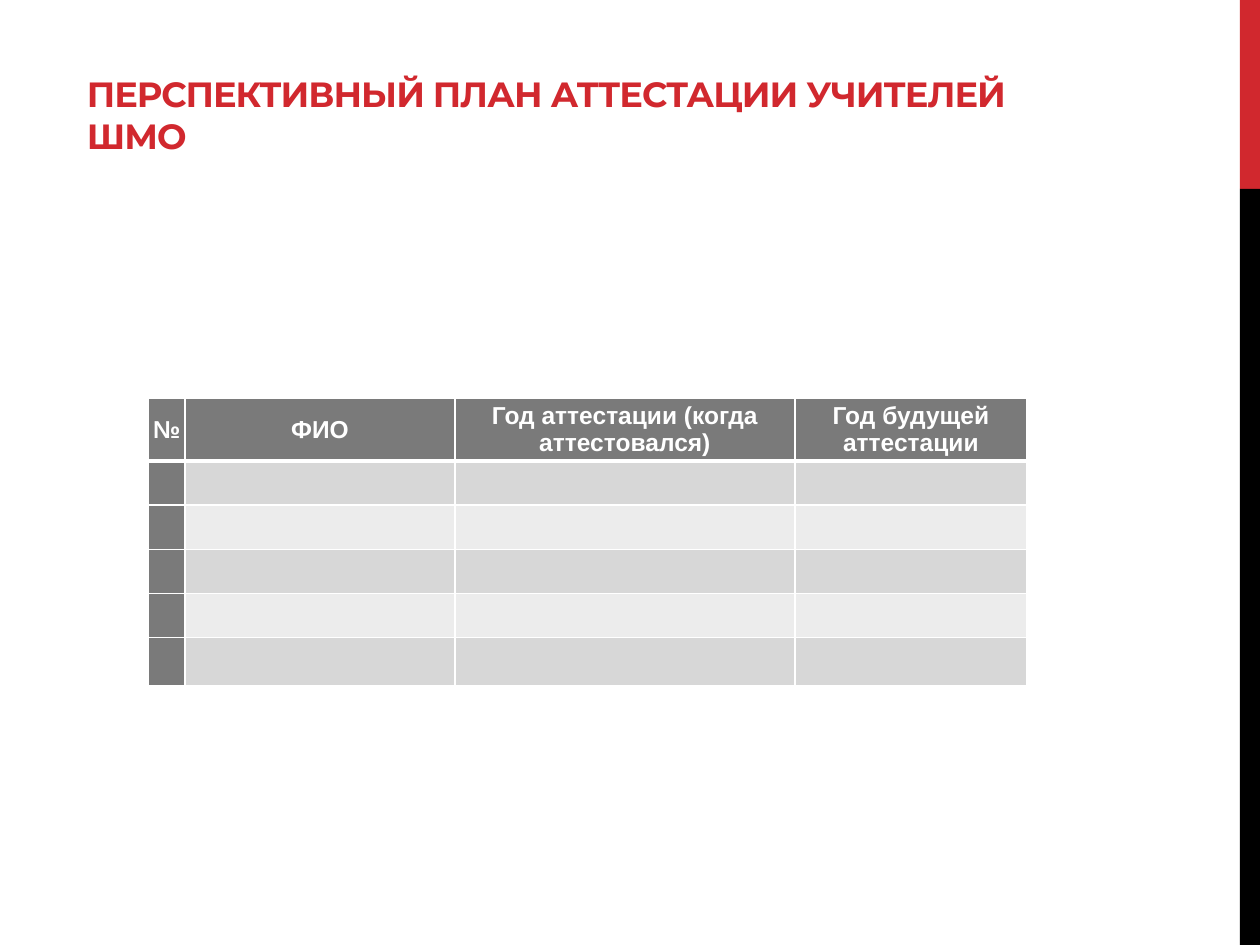
from lxml.etree import SubElement
from pptx import Presentation
from pptx.dml.color import RGBColor
from pptx.enum.shapes import MSO_SHAPE
from pptx.enum.text import MSO_ANCHOR, MSO_AUTO_SIZE, PP_ALIGN
from pptx.oxml.ns import qn
from pptx.util import Inches, Pt

RED = RGBColor(0xD1, 0x28, 0x2E)
BLACK = RGBColor(0, 0, 0)
WHITE = RGBColor(0xFF, 0xFF, 0xFF)
HEADER_GREY = RGBColor(0x7A, 0x7A, 0x7A)
BANDS = (RGBColor(0xD7, 0xD7, 0xD7), RGBColor(0xEC, 0xEC, 0xEC))

SLIDE_WIDTH, SLIDE_HEIGHT = 10, 7.5
# Label, column width, side margin
COLUMNS = (
    ("№", 0.29, 0.02),
    ("ФИО", 2.14, 0.08),
    ("Год аттестации (когда аттестовался)", 2.7, 0.08),
    ("Год будущей аттестации", 1.84, 0.08),
)
ROW_HEIGHTS = (0.5,) + (0.35,) * 4 + (0.38,)


def add_side_stripe(slide, left, top, width, height):
    """Vertical stripe whose top fifth is red and the rest black."""
    red_height = height / 5
    for color, y, part_height in (
        (RED, top, red_height),
        (BLACK, top + red_height, height - red_height),
    ):
        bar = slide.shapes.add_shape(
            MSO_SHAPE.RECTANGLE, *map(Inches, (left, y, width, part_height)))
        bar.shadow.inherit = False
        bar.fill.solid()
        bar.fill.fore_color.rgb = color
        bar.line.fill.background()


def fill_title(slide, left, top, width, height):
    title = slide.shapes.title
    title.left, title.top, title.width, title.height = map(
        Inches, (left, top, width, height))
    frame = title.text_frame
    frame.word_wrap = True
    frame.auto_size = MSO_AUTO_SIZE.NONE
    frame.vertical_anchor = MSO_ANCHOR.BOTTOM
    frame.margin_bottom = Inches(0.39)
    paragraph = frame.paragraphs[0]
    paragraph.alignment = PP_ALIGN.LEFT
    heading = paragraph.add_run()
    heading.text = "ПЕРСПЕКТИВНЫЙ ПЛАН АТТЕСТАЦИИ УЧИТЕЛЕЙ ШМО"
    heading.font.name = "Montserrat"
    heading.font.size = Pt(20)
    heading.font.bold = True
    heading.font.color.rgb = RED
    heading.font._element.set("spc", "-60")


def set_borders(cell, **widths):
    """White borders; widths in points, given in the order L, R, T, B."""
    properties = cell._tc.get_or_add_tcPr()
    for side, width in widths.items():
        line = SubElement(properties, qn(f"a:ln{side}"), w=str(Pt(width)))
        fill = SubElement(line, qn("a:solidFill"))
        SubElement(fill, qn("a:srgbClr"), val=str(WHITE))


def write_header(cell, label):
    paragraph = cell.text_frame.paragraphs[0]
    paragraph.alignment = PP_ALIGN.CENTER
    paragraph.line_spacing = 1.0
    run = paragraph.add_run()
    run.text = label
    run.font.name = "Arial"
    run.font.size = Pt(14)
    run.font.bold = True
    run.font.color.rgb = WHITE


def add_plan_table(slide, left, top, width, height):
    table = slide.shapes.add_table(
        len(ROW_HEIGHTS), len(COLUMNS),
        *map(Inches, (left, top, width, height))).table
    for column, (_, column_width, _) in zip(table.columns, COLUMNS):
        column.width = Inches(column_width)
    for r, row_height in enumerate(ROW_HEIGHTS):
        table.rows[r].height = Inches(row_height)
        for c, (label, _, side_margin) in enumerate(COLUMNS):
            cell = table.cell(r, c)
            cell.margin_left = cell.margin_right = Inches(side_margin)
            cell.margin_top = cell.margin_bottom = 0
            cell.vertical_anchor = MSO_ANCHOR.MIDDLE
            set_borders(cell, L=1, R=1,
                        T=3 if r == 1 else 1, B=3 if r == 0 else 1)
            is_heading = r == 0 or c == 0
            cell.fill.solid()
            cell.fill.fore_color.rgb = (
                HEADER_GREY if is_heading else BANDS[(r - 1) % 2])
            if r == 0:
                write_header(cell, label)


def main():
    deck = Presentation()
    deck.slide_width = Inches(SLIDE_WIDTH)
    deck.slide_height = Inches(SLIDE_HEIGHT)
    slide = deck.slides.add_slide(deck.slide_layouts.get_by_name("Title Only"))
    stripe_width = 0.16
    add_side_stripe(slide, SLIDE_WIDTH - stripe_width, 0,
                    stripe_width, SLIDE_HEIGHT)
    fill_title(slide, 0.59, 0.13, 8.27, 1.5)
    add_plan_table(slide, 1.18, 3.16, 6.97, sum(ROW_HEIGHTS))
    deck.save("out.pptx")


if __name__ == "__main__":
    main()
